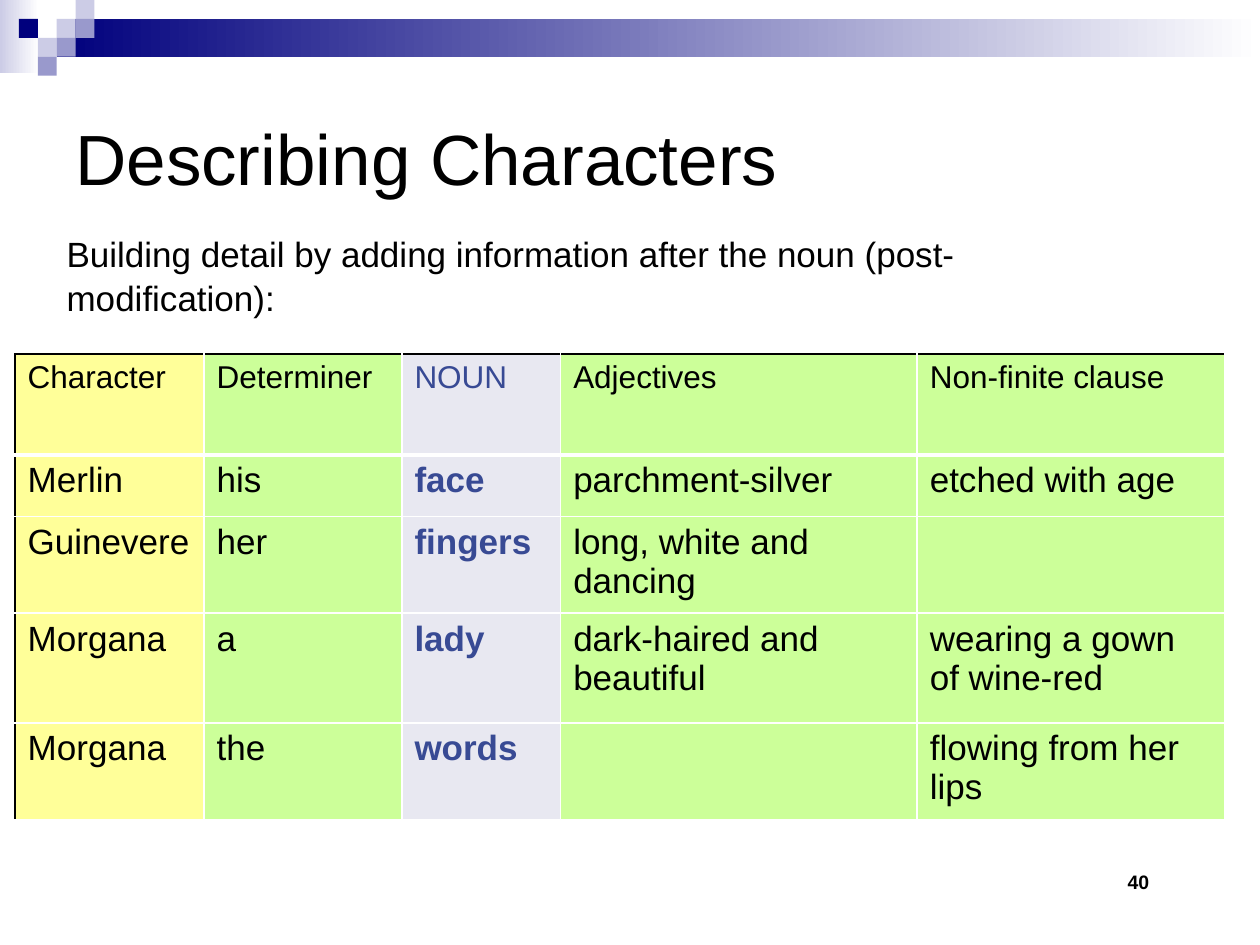
"""Build the "Describing Characters" slide with its noun phrase table."""
from dataclasses import dataclass

from lxml import etree
from pptx import Presentation
from pptx.dml.color import RGBColor
from pptx.enum.shapes import MSO_SHAPE
from pptx.enum.text import MSO_ANCHOR
from pptx.oxml.ns import qn
from pptx.util import Inches, Pt

RECTANGLE = MSO_SHAPE.RECTANGLE
TOP, MIDDLE, BOTTOM = MSO_ANCHOR.TOP, MSO_ANCHOR.MIDDLE, MSO_ANCHOR.BOTTOM


@dataclass(frozen=True)
class Theme:
    font: str = "Arial"
    black: str = "000000"
    white: str = "FFFFFF"
    navy: str = "00007D"
    lilac: str = "CCCCE6"
    violet: str = "9999CC"
    yellow: str = "FFFF99"
    green: str = "CCFF99"
    grey: str = "E8E8F1"
    noun: str = "384A94"
    title_size: float = 40.6
    body_size: float = 20
    header_size: float = 18
    number_size: float = 11.1


class SlideBuilder:
    def __init__(self, page, theme):
        self.page = page
        self.theme = theme

    def block(self, left, top, width, height, color, end_color=None):
        box = self.page.shapes.add_shape(
            RECTANGLE, Inches(left), Inches(top), Inches(width), Inches(height))
        box.shadow.inherit = False
        box.line.fill.background()
        if end_color is None:
            box.fill.solid()
            box.fill.fore_color.rgb = RGBColor.from_string(color)
            return
        box.fill.gradient()
        box.fill.gradient_angle = 0
        for stop, position, shade in zip(box.fill.gradient_stops, (0, 1), (color, end_color)):
            stop.position = position
            stop.color.rgb = RGBColor.from_string(shade)

    def style(self, para, size, color, bold=False):
        for font in [para.font] + [span.font for span in para.runs]:
            font.name = self.theme.font
            font.size = Pt(size)
            font.bold = bold
            font.color.rgb = RGBColor.from_string(color)

    def text(self, left, top, width, height, words, size, anchor=TOP, bold=False, spacing=1.0):
        box = self.page.shapes.add_textbox(
            Inches(left), Inches(top), Inches(width), Inches(height))
        frame = box.text_frame
        frame.word_wrap = True
        frame.vertical_anchor = anchor
        frame.text = words
        para = frame.paragraphs[0]
        para.line_spacing = spacing
        self.style(para, size, self.theme.black, bold)

    def borders(self, cell, edges):
        properties = cell._tc.get_or_add_tcPr()
        for index, (side, (color, points)) in enumerate(edges.items()):
            line = etree.Element(qn(f"a:ln{side}"), w=str(Pt(points)))
            fill = etree.SubElement(line, qn("a:solidFill"))
            etree.SubElement(fill, qn("a:srgbClr"), val=color)
            properties.insert(index, line)

    def table(self, left, top, widths, heights, rows, fills):
        theme = self.theme
        table = self.page.shapes.add_table(
            len(rows), len(widths), Inches(left), Inches(top),
            Inches(sum(widths)), Inches(sum(heights))).table
        table.first_row = False
        table.horz_banding = False
        for column, width in zip(table.columns, widths):
            column.width = Inches(width)
        for row, height in zip(table.rows, heights):
            row.height = Inches(height)
        noun_column = rows[0].index("NOUN")
        thin = (theme.white, 1)
        outline = (theme.black, 1)
        for r, words in enumerate(rows):
            header = r == 0
            for c, word in enumerate(words):
                cell = table.cell(r, c)
                cell.text = word
                cell.fill.solid()
                cell.fill.fore_color.rgb = RGBColor.from_string(fills[c])
                is_noun = c == noun_column
                self.style(cell.text_frame.paragraphs[0],
                           theme.header_size if header else theme.body_size,
                           theme.noun if is_noun else theme.black,
                           is_noun and not header)
                self.borders(cell, {
                    "L": outline if c == 0 else thin,
                    "R": thin,
                    "T": outline if header else (theme.white, 3 if r == 1 else 1),
                    "B": (theme.white, 3 if header else 1)})


def main():
    deck = Presentation()
    deck.slide_width, deck.slide_height = Inches(10), Inches(7.5)
    page = deck.slides.add_slide(deck.slide_layouts[6])
    theme = Theme()
    slide = SlideBuilder(page, theme)

    slide.block(0, 0, 0.31, 0.58, theme.lilac, theme.white)
    slide.block(0.45, 0.15, 9.55, 0.3, theme.navy, theme.white)
    square = 0.15
    mosaic = [(3, 1, theme.lilac), (4, 0, theme.lilac), (4, 1, theme.violet),
              (2, 2, theme.lilac), (1, 1, theme.navy), (3, 2, theme.violet),
              (2, 3, theme.violet)]
    for column, row, color in mosaic:
        slide.block(column * square, row * square, square, square, color)

    slide.text(0.5, 0.5, 9, 1.5, "Describing Characters", theme.title_size, MIDDLE)
    slide.table(
        0.12, 2.81,
        widths=[1.5, 1.57, 1.26, 2.83, 2.44],
        heights=[0.8, 0.49, 0.49, 0.87, 0.49],
        rows=[
            ["Character", "Determiner", "NOUN", "Adjectives", "Non-finite clause"],
            ["Merlin", "his", "face", "parchment-silver", "etched with age"],
            ["Guinevere", "her", "fingers", "long, white and dancing", ""],
            ["Morgana", "a", "lady", "dark-haired and beautiful", "wearing a gown of wine-red"],
            ["Morgana", "the", "words", "", "flowing from her lips"],
        ],
        fills=[theme.yellow, theme.green, theme.grey, theme.green, theme.green])
    slide.text(8.85, 6.74, 1.15, 0.4, "40", theme.number_size, BOTTOM, bold=True)
    slide.text(0.43, 1.78, 8.85, 0.44,
               "Building detail by adding information after the noun (post-modification):",
               theme.body_size, spacing=1.05)
    deck.save("out.pptx")


if __name__ == "__main__":
    main()
